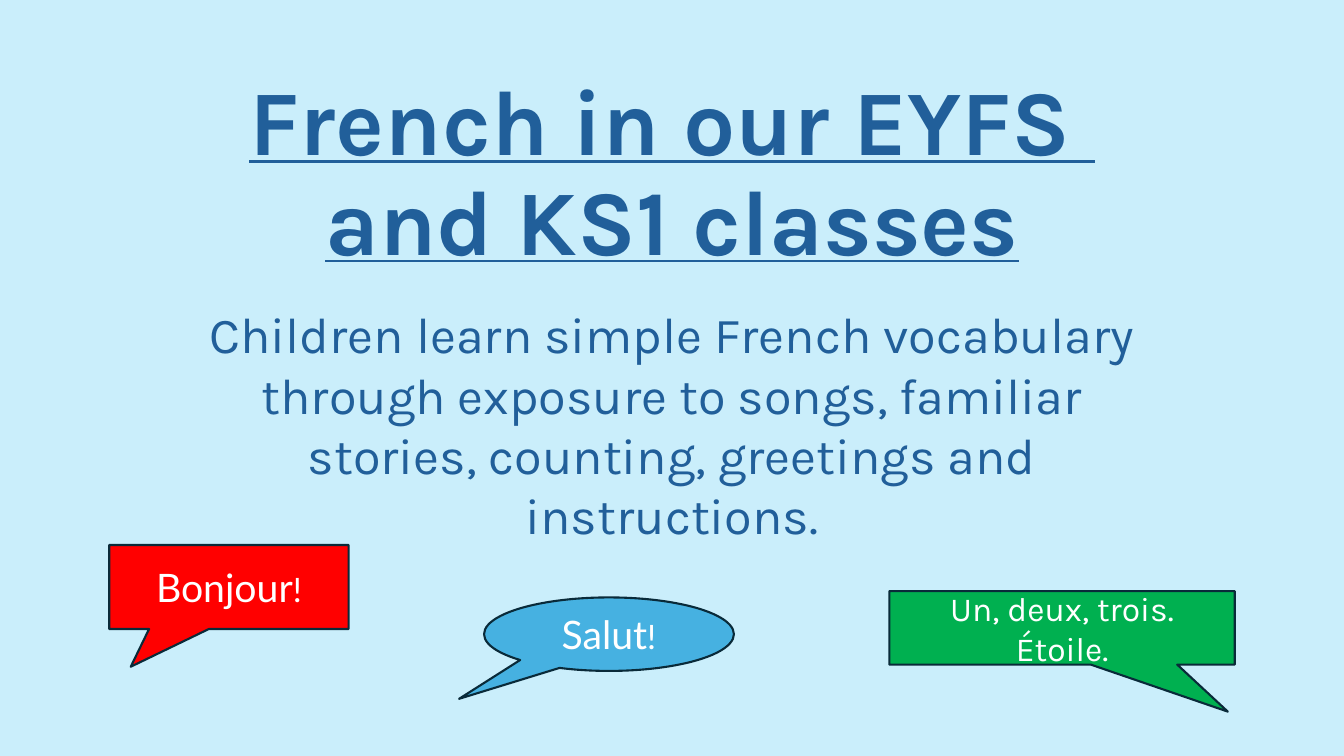
from dataclasses import dataclass

import pptx
import pptx.dml.color
import pptx.enum.shapes
import pptx.enum.text
import pptx.util

SCALE = 9525
SHAPE = pptx.enum.shapes.MSO_SHAPE
ANCHOR = pptx.enum.text.MSO_ANCHOR


@dataclass(frozen=True)
class Theme:
    background: str = "CAEEFB"
    heading: str = "215F9A"
    outline: str = "092A39"
    white: str = "FFFFFF"
    red: str = "FF0000"
    blue: str = "46B1E1"
    green: str = "00B050"
    title_size: int = 66
    body_size: int = 36
    greeting_size: int = 28
    small_size: int = 24
    main_font: str = "Karla"
    greeting_font: str = "Lato"


THEME = Theme()


@dataclass(frozen=True)
class Run:
    text: str
    size: int


@dataclass(frozen=True)
class Box:
    left: int
    top: int
    width: int
    height: int

    def emu(self) -> list[int]:
        return [v * SCALE for v in (self.left, self.top, self.width, self.height)]


@dataclass(frozen=True)
class Callout:
    kind: SHAPE
    box: Box
    tail: tuple[float, float]
    fill: str
    font: str
    runs: list[Run]


CALLOUTS = [
    Callout(SHAPE.RECTANGULAR_CALLOUT, Box(104, 519, 228, 80), (-0.41, 0.95),
            THEME.red, THEME.greeting_font,
            [Run("Bonjour", THEME.greeting_size), Run("!", THEME.small_size)]),
    Callout(SHAPE.OVAL_CALLOUT, Box(461, 569, 238, 70), (-0.6, 0.88),
            THEME.blue, THEME.greeting_font,
            [Run("Salut", THEME.greeting_size), Run("!", THEME.small_size)]),
    Callout(SHAPE.RECTANGULAR_CALLOUT, Box(847, 563, 329, 70), (0.48, 1.14),
            THEME.green, THEME.main_font,
            [Run("Un, deux, trois.\vÉtoile.", THEME.small_size)]),
]


def rgb(value: str) -> pptx.dml.color.RGBColor:
    return pptx.dml.color.RGBColor.from_string(value)


def write_text(sp, runs: list[Run], *, font: str, color: str,
               anchor: ANCHOR = ANCHOR.TOP, bold: bool = False,
               underline: bool = False, spacing: float = 1.0) -> None:
    tf = sp.text_frame
    tf.word_wrap = True
    tf.vertical_anchor = anchor
    p = tf.paragraphs[0]
    p.alignment = pptx.enum.text.PP_ALIGN.CENTER
    p.line_spacing = spacing
    for run in runs:
        for i, line in enumerate(run.text.split("\v")):
            if i:
                p.add_line_break()
            r = p.add_run()
            r.text = line
            r.font.name = font
            r.font.size = pptx.util.Pt(run.size)
            r.font.color.rgb = rgb(color)
            r.font.bold = bold
            r.font.underline = underline


def draw_callout(s, callout: Callout) -> None:
    sp = s.shapes.add_shape(callout.kind, *callout.box.emu())
    sp.shadow.inherit = False
    sp.adjustments[0], sp.adjustments[1] = callout.tail
    sp.fill.solid()
    sp.fill.fore_color.rgb = rgb(callout.fill)
    sp.line.color.rgb = rgb(THEME.outline)
    sp.line.width = pptx.util.Pt(1.5)
    write_text(sp, callout.runs, font=callout.font, color=THEME.white,
               anchor=ANCHOR.MIDDLE)


def main() -> None:
    prs = pptx.Presentation()
    prs.slide_width, prs.slide_height = 1280 * SCALE, 720 * SCALE
    s = prs.slides.add_slide(prs.slide_layouts[6])
    s.background.fill.solid()
    s.background.fill.fore_color.rgb = rgb(THEME.background)

    title = s.shapes.add_textbox(*Box(88, 38, 1104, 229).emu())
    write_text(title, [Run("French in our EYFS \vand KS1 classes", THEME.title_size)],
               font=THEME.main_font, color=THEME.heading, anchor=ANCHOR.BOTTOM,
               bold=True, underline=True, spacing=0.9)

    body = s.shapes.add_textbox(*Box(176, 284, 928, 313).emu())
    write_text(body, [Run("Children learn simple French vocabulary through exposure to "
                          "songs, familiar stories, counting, greetings and "
                          "instructions.", THEME.body_size)],
               font=THEME.main_font, color=THEME.heading)

    for callout in CALLOUTS:
        draw_callout(s, callout)
    prs.save("out.pptx")


if __name__ == "__main__":
    main()
